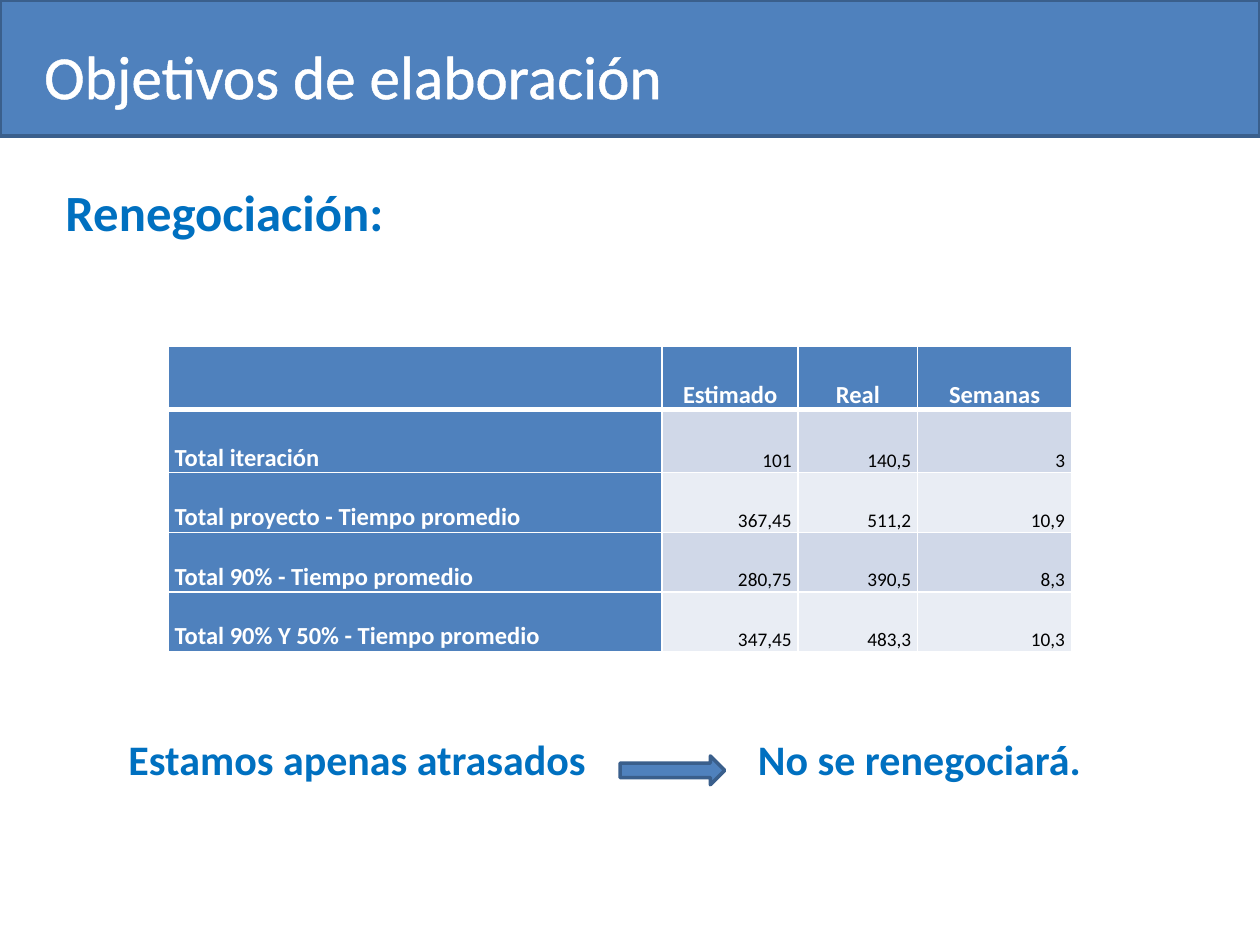
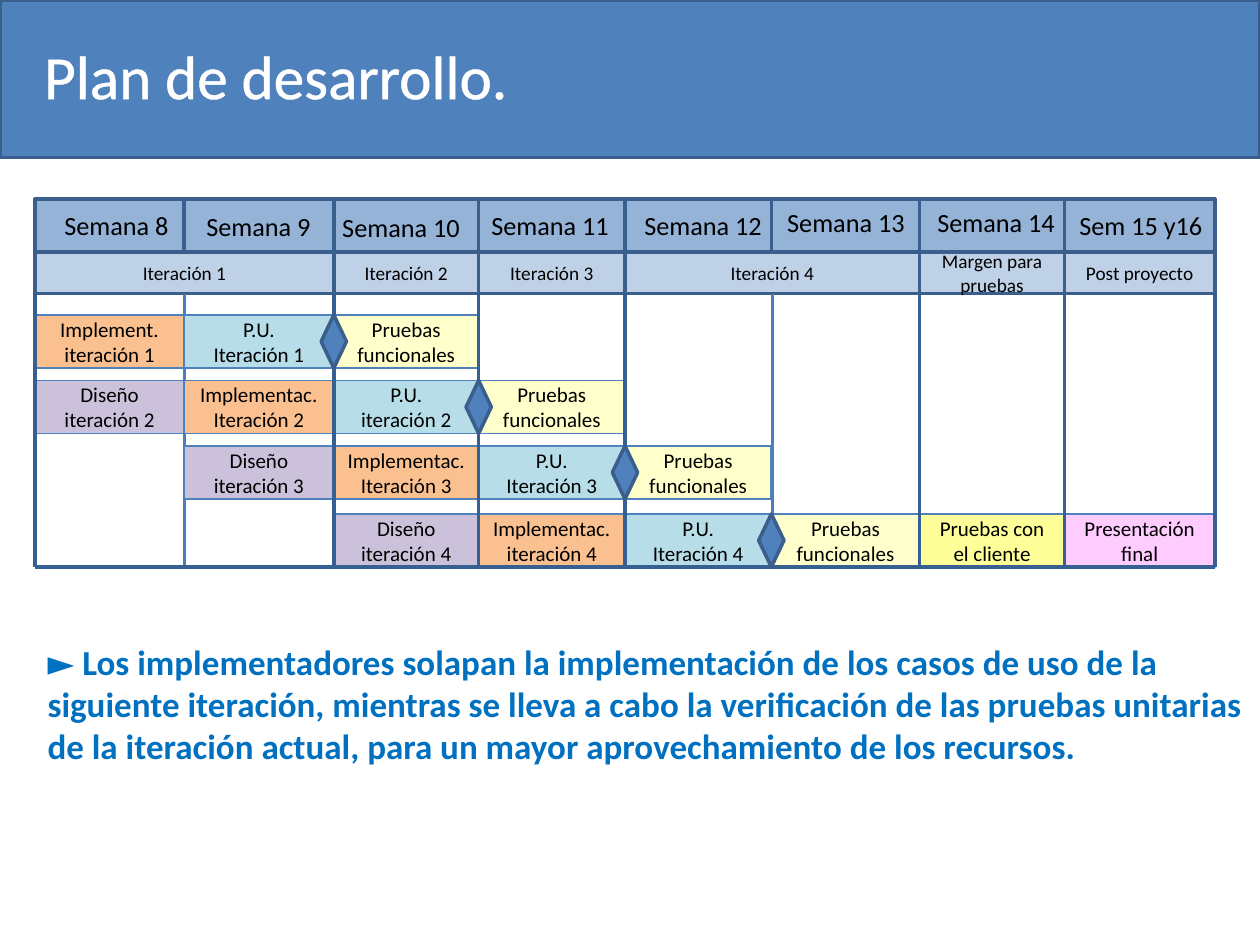
import pptx
import pptx.dml.color
import pptx.enum.shapes
import pptx.enum.text
import pptx.oxml
import pptx.oxml.ns
import pptx.util
from dataclasses import dataclass
from lxml import etree

Cm = pptx.util.Cm
Pt = pptx.util.Pt
KIND = pptx.enum.shapes.MSO_SHAPE
ALIGN = pptx.enum.text.PP_ALIGN
ANCHOR = pptx.enum.text.MSO_ANCHOR
qn = pptx.oxml.ns.qn


@dataclass(frozen=True)
class Theme:
    font: str = "Calibri"
    blue: str = "4F81BD"
    edge: str = "3A5F8C"
    frame: str = "376092"
    divider: str = "4B7EBC"
    accent: str = "0070C0"
    white: str = "FFFFFF"
    black: str = "000000"
    week: str = "95B3D7"
    iteration: str = "BFD1E7"
    table_bands: tuple = ("D0D8E8", "E9EDF4")
    title_size: int = 35
    heading_size: int = 29
    status_size: int = 24
    note_size: int = 20
    week_size: int = 15
    label_size: int = 14
    bar_size: int = 12
    small_size: int = 11


THEME = Theme()

GOALS_TITLE = "Objetivos de elaboración"
GOALS_HEADING = "Renegociación:"
ESTIMATES = [
    ("", "Estimado", "Real", "Semanas"),
    ("Total iteración", "101", "140,5", "3"),
    ("Total proyecto - Tiempo promedio", "367,45", "511,2", "10,9"),
    ("Total 90% - Tiempo promedio", "280,75", "390,5", "8,3"),
    ("Total 90% Y 50% - Tiempo promedio", "347,45", "483,3", "10,3"),
]
ESTIMATE_WIDTHS = (9.96, 2.74, 2.41, 3.1)
ESTIMATE_HEIGHTS = (1.27, 1.27, 1.2, 1.2, 1.2)
STATUS = [
    ("Estamos apenas atrasados", 2.34, 10.2),
    ("No se renegociará.", 15.03, 8),
]

PLAN_TITLE = "Plan de desarrollo."
WEEK_EDGES = (0.71, 3.71, 6.73, 9.65, 12.6, 15.55, 18.54, 21.46, 24.49)
WEEKS = [
    ("Semana 8", 0.99, 4.09, 2.72),
    ("Semana 9", 3.71, 4.11, 3),
    ("Semana 10", 6.55, 4.14, 3.07),
    ("Semana 11", 9.58, 4.09, 3.02),
    ("Semana 12", 12.65, 4.09, 3.05),
    ("Semana 13", 15.52, 4.04, 3.07),
    ("Semana 14", 18.52, 4.04, 3.12),
    ("Sem 15 y16", 21.44, 4.09, 3.12),
]
ITERATIONS = [
    ("Iteración 1", 0, 2),
    ("Iteración 2", 2, 3),
    ("Iteración 3", 3, 4),
    ("Iteración 4", 4, 6),
    ("Margen para pruebas", 6, 7),
    ("Post proyecto", 7, 8),
]
PHASE_FILLS = {
    "design": "CCC1DA",
    "build": "FAC090",
    "unit": "B7DEE8",
    "functional": "FFFFCC",
    "client": "FFFF99",
    "final": "FFCCFF",
}
TRACKS = [
    (6.35, 0, [("build", "Implement. iteración 1"),
               ("unit", "P.U.\nIteración 1"),
               ("functional", "Pruebas funcionales")]),
    (7.67, 0, [("design", "Diseño iteración 2"),
               ("build", "Implementac.\nIteración 2"),
               ("unit", "P.U.\niteración 2"),
               ("functional", "Pruebas funcionales")]),
    (8.99, 1, [("design", "Diseño iteración 3"),
               ("build", "Implementac. Iteración 3"),
               ("unit", "P.U.\nIteración 3"),
               ("functional", "Pruebas funcionales")]),
    (10.36, 2, [("design", "Diseño iteración 4"),
                ("build", "Implementac.\niteración 4"),
                ("unit", "P.U.\nIteración 4"),
                ("functional", "Pruebas funcionales"),
                ("client", "Pruebas con el cliente"),
                ("final", "Presentación final")]),
]
WEEK_TOP, ITERATION_TOP, GRID_TOP, GRID_BOTTOM = 4.01, 5.08, 5.92, 11.43
BAR_HEIGHT = 1.07
MILESTONE_WIDTH = 0.51
PLAN_NOTE = "\n".join([
    "► Los implementadores solapan la implementación de los casos de uso de la",
    "siguiente iteración, mientras se lleva a cabo la verificación de las pruebas unitarias",
    "de la iteración actual, para un mayor aprovechamiento de los recursos.",
])


def rgb(color):
    return pptx.dml.color.RGBColor.from_string(color)


def write(frame, text, size, color, bold=False, align=ALIGN.LEFT, spacing=None):
    frame.word_wrap = True
    for number, line in enumerate(text.split("\n")):
        paragraph = frame.add_paragraph() if number else frame.paragraphs[0]
        paragraph.alignment = align
        paragraph.line_spacing = spacing
        run = paragraph.add_run()
        run.text = line
        run.font.name = THEME.font
        run.font.size = Pt(size)
        run.font.bold = bold
        run.font.color.rgb = rgb(color)


def add_text(slide, left, top, width, height, *content, **style):
    frame = slide.shapes.add_textbox(Cm(left), Cm(top), Cm(width), Cm(height)).text_frame
    write(frame, *content, **style)
    return frame


def add_block(slide, kind, left, top, width, height, fill,
              edge=THEME.edge, weight=2, text="", size=THEME.bar_size):
    block = slide.shapes.add_shape(kind, Cm(left), Cm(top), Cm(width), Cm(height))
    block.shadow.inherit = False
    block.fill.solid()
    block.fill.fore_color.rgb = rgb(fill)
    block.line.color.rgb = rgb(edge)
    block.line.width = Pt(weight)
    if text:
        block.text_frame.vertical_anchor = ANCHOR.MIDDLE
        write(block.text_frame, text, size, THEME.black, align=ALIGN.CENTER)
    return block


def add_line(slide, start, end, color, weight):
    line = slide.shapes.add_connector(pptx.enum.shapes.MSO_CONNECTOR.STRAIGHT, *start, *end)
    line.line.color.rgb = rgb(color)
    line.line.width = Pt(weight)
    etree.SubElement(line.element.spPr, qn("a:effectLst"))
    return line


def add_slide(deck, title, band_height):
    slide = deck.slides.add_slide(deck.slide_layouts[6])
    add_block(slide, KIND.RECTANGLE, 0, 0, 25.4, band_height, THEME.blue)
    frame = add_text(slide, 0.64, 0.64, 19.48, 1.75, title, THEME.title_size, THEME.white)
    run = frame.paragraphs[0].runs[0]
    outline = pptx.oxml.parse_xml(
        f'<a:ln xmlns:a="{pptx.oxml.ns.nsuri("a")}" w="{Pt(1.45)}">'
        f'<a:solidFill><a:srgbClr val="{THEME.white}"/></a:solidFill></a:ln>')
    run.font._element.insert(0, outline)
    return slide


def set_borders(cell, bottom):
    sides = (("lnL", 1), ("lnR", 1), ("lnT", 1), ("lnB", bottom))
    for place, (side, weight) in enumerate(sides):
        border = pptx.oxml.parse_xml(
            f'<a:{side} xmlns:a="{pptx.oxml.ns.nsuri("a")}" w="{Pt(weight)}">'
            f'<a:solidFill><a:srgbClr val="{THEME.white}"/></a:solidFill></a:{side}>')
        cell._tc.get_or_add_tcPr().insert(place, border)


def add_estimates(slide):
    table = slide.shapes.add_table(
        len(ESTIMATES), len(ESTIMATE_WIDTHS), Cm(3.39), Cm(6.99),
        Cm(sum(ESTIMATE_WIDTHS)), Cm(sum(ESTIMATE_HEIGHTS))).table
    for column, width in zip(table.columns, ESTIMATE_WIDTHS):
        column.width = Cm(width)
    for r, (values, height) in enumerate(zip(ESTIMATES, ESTIMATE_HEIGHTS)):
        table.rows[r].height = Cm(height)
        for c, value in enumerate(values):
            cell = table.cell(r, c)
            heading = r == 0 or c == 0
            cell.fill.solid()
            cell.fill.fore_color.rgb = rgb(THEME.blue if heading else THEME.table_bands[(r - 1) % 2])
            cell.vertical_anchor = ANCHOR.BOTTOM
            cell.margin_left = cell.margin_right = Cm(0.13)
            cell.margin_top = cell.margin_bottom = 0
            set_borders(cell, 3 if r == 0 else 1)
            if not value:
                continue
            if heading:
                align = ALIGN.CENTER if r == 0 else ALIGN.LEFT
                write(cell.text_frame, value, THEME.label_size, THEME.white, True, align)
            else:
                write(cell.text_frame, value, THEME.small_size, THEME.black, False, ALIGN.RIGHT)


def build_goals(deck):
    slide = add_slide(deck, GOALS_TITLE, 2.74)
    add_text(slide, 1.07, 3.94, 21.59, 1.9, GOALS_HEADING, THEME.heading_size,
             THEME.accent, bold=True, spacing=Pt(23))
    add_estimates(slide)
    for text, left, width in STATUS:
        add_text(slide, left, 14.86, width, 1.9, text, THEME.status_size,
                 THEME.accent, bold=True, spacing=Pt(23))
    add_block(slide, KIND.RIGHT_ARROW, 12.5, 15.24, 2.11, 0.58, THEME.blue)


def add_span(slide, first, last, top, height, fill, **style):
    left = WEEK_EDGES[first]
    return add_block(slide, KIND.RECTANGLE, left, top, WEEK_EDGES[last] - left, height, fill, **style)


def build_plan(deck):
    slide = add_slide(deck, PLAN_TITLE, 3.18)
    for week, (text, left, top, width) in enumerate(WEEKS):
        add_span(slide, week, week + 1, WEEK_TOP, ITERATION_TOP - WEEK_TOP, THEME.week)
        add_text(slide, left, top, width, 0.89, text, THEME.week_size, THEME.black, align=ALIGN.CENTER)

    for text, first, last in ITERATIONS:
        iteration = add_span(slide, first, last, ITERATION_TOP, GRID_TOP - ITERATION_TOP,
                             THEME.iteration, text=text, size=THEME.small_size)
        if last - first == 2:
            middle = iteration.left + iteration.width // 2
            divider = add_line(slide, (middle, Cm(GRID_TOP)), (middle, Cm(GRID_BOTTOM)),
                               THEME.divider, 1.5)
            divider.begin_connect(iteration, 2)

    for top, start, phases in TRACKS:
        for week, (phase, text) in enumerate(phases, start):
            add_span(slide, week, week + 1, top, BAR_HEIGHT, PHASE_FILLS[phase],
                     edge=THEME.blue, weight=1, text=text)

    for boundary in [first for _, first, _ in ITERATIONS] + [len(WEEKS)]:
        x = Cm(WEEK_EDGES[boundary])
        add_line(slide, (x, Cm(GRID_TOP)), (x, Cm(GRID_BOTTOM)), THEME.frame, 2)
    add_line(slide, (Cm(WEEK_EDGES[0]), Cm(GRID_BOTTOM)),
             (Cm(WEEK_EDGES[-1]), Cm(GRID_BOTTOM)), THEME.frame, 2)

    for top, start, phases in TRACKS:
        handover = start + [phase for phase, _ in phases].index("functional")
        add_block(slide, KIND.DIAMOND, WEEK_EDGES[handover] - MILESTONE_WIDTH / 2, top,
                  MILESTONE_WIDTH, BAR_HEIGHT, THEME.blue)

    add_text(slide, 0.71, 12.78, 24.94, 2.82, PLAN_NOTE, THEME.note_size, THEME.accent, bold=True)


def main():
    deck = pptx.Presentation()
    deck.slide_width, deck.slide_height = Cm(25.4), Cm(19.05)
    build_goals(deck)
    build_plan(deck)
    deck.save("out.pptx")


if __name__ == "__main__":
    main()
